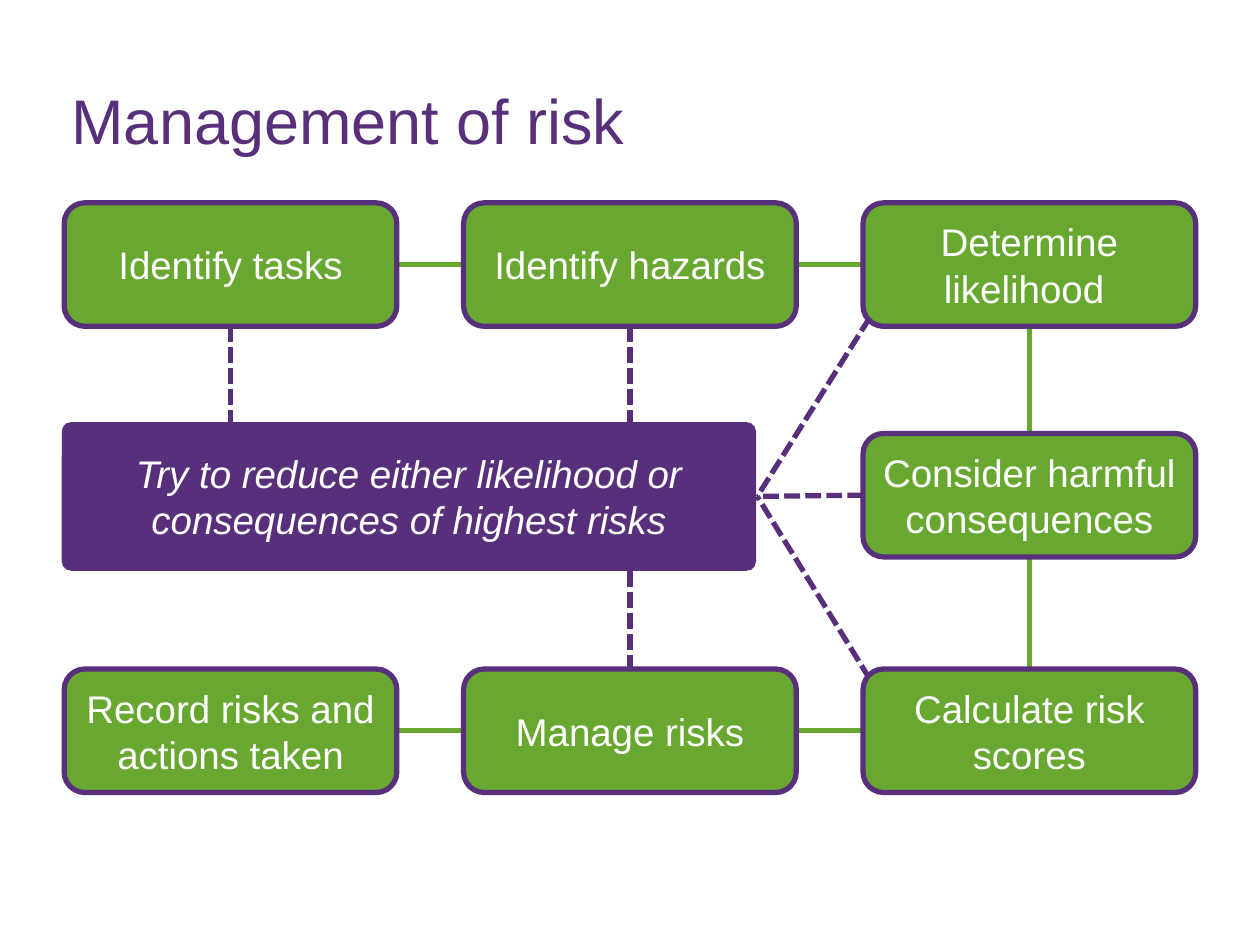
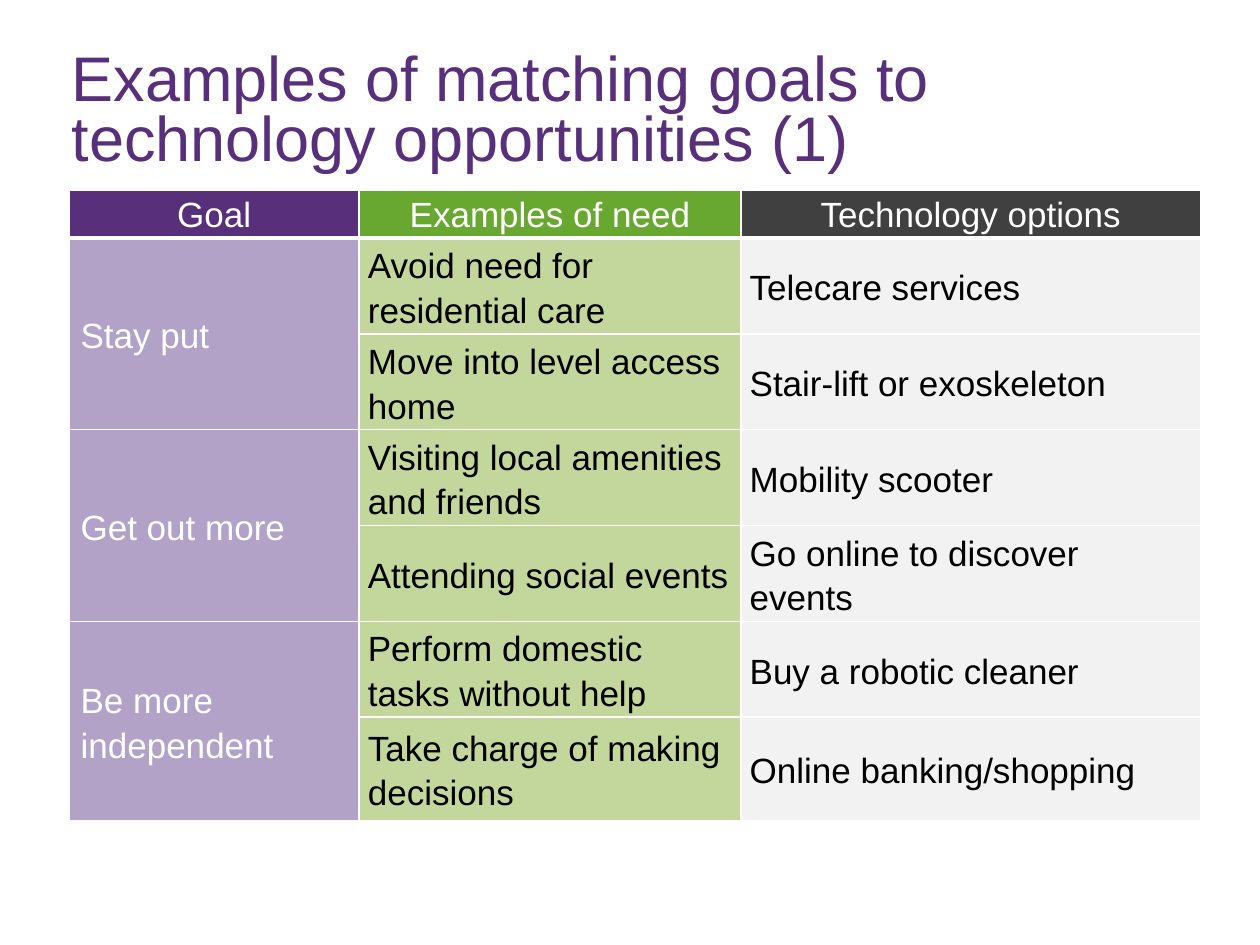
from lxml.etree import SubElement
from pptx import Presentation
from pptx.dml.color import RGBColor
from pptx.enum.dml import MSO_LINE
from pptx.enum.shapes import MSO_CONNECTOR, MSO_SHAPE
from pptx.enum.text import MSO_ANCHOR, PP_ALIGN
from pptx.oxml.ns import qn
from pptx.util import Inches, Pt

COLORS = {
    "purple": "582F7A", "green": "69A830", "charcoal": "404040",
    "lilac": "B3A2C7", "lime": "C3D69B", "mist": "F2F2F2",
    "white": "FFFFFF", "black": "000000",
}
FONT = "Arial"

# Flow chart grid, in inches
COL_LEFTS = [0.51 + 3.17 * col for col in range(3)]
ROW_TOPS = [1.61, 3.44, 5.31]
BOX_W, BOX_H = 2.64, 0.98
PANEL = (0.49, 3.35, 5.51, 1.18)

STEPS = [
    ("Identify tasks", 0, 0), ("Identify hazards", 1, 0),
    ("Determine likelihood ", 2, 0), ("Consider harmful consequences", 2, 1),
    ("Calculate risk scores", 2, 2), ("Manage risks", 1, 2),
    ("Record risks and actions taken", 0, 2),
]

HEADINGS = [("Goal", "purple"), ("Examples of need", "green"),
            ("Technology options", "charcoal")]
GOALS = [
    ("Stay put", [
        ("Avoid need for residential care", "Telecare services"),
        ("Move into level access home", "Stair-lift or exoskeleton")]),
    ("Get out more", [
        ("Visiting local amenities and friends", "Mobility scooter"),
        ("Attending social events", "Go online to discover events")]),
    ("Be more independent", [
        ("Perform domestic tasks without help", "Buy a robotic cleaner"),
        ("Take charge of making decisions", "Online banking/shopping")]),
]
COL_WIDTHS = [2.3, 3.03, 3.65]
ROW_HEIGHTS = [0.36] + [0.75] * 5 + [0.82]


def rgb(name):
    return RGBColor.from_string(COLORS[name])


def style(p, size, color, align=PP_ALIGN.LEFT, italic=False, spacing=None):
    p.alignment = align
    p.line_spacing = spacing
    p.font.name = FONT
    p.font.size = Pt(size)
    p.font.bold = False
    p.font.italic = italic
    p.font.color.rgb = rgb(color)


def add_title(s, text, spacing=None, bottom_inset=0.05):
    box = s.shapes.add_textbox(*map(Inches, (0.47, 0.4, 9.06, 1.1)))
    tf = box.text_frame
    tf.word_wrap = True
    tf.vertical_anchor = MSO_ANCHOR.MIDDLE
    tf.margin_bottom = Inches(bottom_inset)
    tf.text = text
    style(tf.paragraphs[0], 36, "purple", spacing=spacing)


def add_box(s, text, bounds, fill, outline=None, radius=0.1667, italic=False):
    sp = s.shapes.add_shape(MSO_SHAPE.ROUNDED_RECTANGLE, *map(Inches, bounds))
    sp.shadow.inherit = False
    sp.adjustments[0] = radius
    sp.fill.solid()
    sp.fill.fore_color.rgb = rgb(fill)
    if outline:
        sp.line.color.rgb = rgb(outline)
        sp.line.width = Pt(3)
    else:
        sp.line.fill.background()
    tf = sp.text_frame
    tf.word_wrap = True
    tf.vertical_anchor = MSO_ANCHOR.MIDDLE
    tf.text = text
    style(tf.paragraphs[0], 22, "white", PP_ALIGN.CENTER, italic)


def add_line(s, start, end, color="green", dashed=False):
    line = s.shapes.add_connector(MSO_CONNECTOR.STRAIGHT,
                                  *map(Inches, (*start, *end)))
    line.line.color.rgb = rgb(color)
    line.line.width = Pt(3)
    if dashed:
        line.line.dash_style = MSO_LINE.SQUARE_DOT
    SubElement(line._element.spPr, qn("a:effectLst"))


def on_box(col, row, across, down):
    """Point on a step box, given as shares of its width and height."""
    return COL_LEFTS[col] + across * BOX_W, ROW_TOPS[row] + down * BOX_H


def set_borders(cell, bottom):
    tcPr = cell._tc.get_or_add_tcPr()
    for side in "LRTB":
        width = Pt(bottom if side == "B" else 1)
        ln = SubElement(tcPr, qn(f"a:ln{side}"), w=str(width))
        fill = SubElement(ln, qn("a:solidFill"))
        SubElement(fill, qn("a:srgbClr"), val=COLORS["white"])


def fill_cell(cell, text, fill, color="black", header=False, left=0.07):
    set_borders(cell, 3 if header else 1)
    cell.fill.solid()
    cell.fill.fore_color.rgb = rgb(fill)
    cell.margin_left, cell.margin_right = Inches(left), Inches(0.07)
    cell.margin_top = cell.margin_bottom = 0
    cell.vertical_anchor = MSO_ANCHOR.TOP if header else MSO_ANCHOR.MIDDLE
    cell.text = text
    style(cell.text_frame.paragraphs[0], 20, color,
          PP_ALIGN.CENTER if header else PP_ALIGN.LEFT, spacing=1.14)


def add_risk_slide(prs):
    s = prs.slides.add_slide(prs.slide_layouts[6])
    add_title(s, "Management of risk")

    # Main route: along the top, down the right, back along the bottom
    for row in (0, 2):
        for col in (0, 1):
            add_line(s, on_box(col, row, 1, 0.5), on_box(col + 1, row, 0, 0.5))
    for row in (0, 1):
        add_line(s, on_box(2, row, 0.5, 1), on_box(2, row + 1, 0.5, 0))

    # Dashed links to the central panel
    left, top, width, height = PANEL
    for col in (0, 1):
        x, y = on_box(col, 0, 0.5, 1)
        add_line(s, (x, y), (x, top), "purple", True)
    x, y = on_box(1, 2, 0.5, 0)
    add_line(s, (x, top + height), (x, y), "purple", True)
    hub = (left + width + 0.01, top + height / 2)
    for row, across, down in ((0, 0.02, 0.93), (1, 0, 0.5), (2, 0.02, 0.08)):
        add_line(s, on_box(2, row, across, down), hub, "purple", True)

    # Boxes
    add_box(s, "Try to reduce either likelihood or consequences of highest risks",
            PANEL, "purple", radius=0.063, italic=True)
    for text, col, row in STEPS:
        add_box(s, text, (*on_box(col, row, 0, 0), BOX_W, BOX_H),
                "green", "purple")


def add_goals_slide(prs):
    s = prs.slides.add_slide(prs.slide_layouts[6])
    add_title(s, "Examples of matching goals to technology opportunities (1)",
              spacing=0.8, bottom_inset=0.15)
    bounds = (0.55, 1.51, sum(COL_WIDTHS), sum(ROW_HEIGHTS))
    table = s.shapes.add_table(len(ROW_HEIGHTS), len(COL_WIDTHS),
                               *map(Inches, bounds)).table
    table.horz_banding = False
    for column, width in zip(table.columns, COL_WIDTHS):
        column.width = Inches(width)
    for row, height in zip(table.rows, ROW_HEIGHTS):
        row.height = Inches(height)

    for col, (text, fill) in enumerate(HEADINGS):
        fill_cell(table.cell(0, col), text, fill, "white", header=True)
    row = 1
    for goal, examples in GOALS:
        first = table.cell(row, 0)
        first.merge(table.cell(row + len(examples) - 1, 0))
        fill_cell(first, goal, "lilac", "white", left=0.09)
        for need, option in examples:
            fill_cell(table.cell(row, 1), need, "lime")
            fill_cell(table.cell(row, 2), option, "mist")
            row += 1


def main():
    prs = Presentation()
    prs.slide_width, prs.slide_height = Inches(10), Inches(7.5)
    add_risk_slide(prs)
    add_goals_slide(prs)
    prs.save("out.pptx")


if __name__ == "__main__":
    main()
